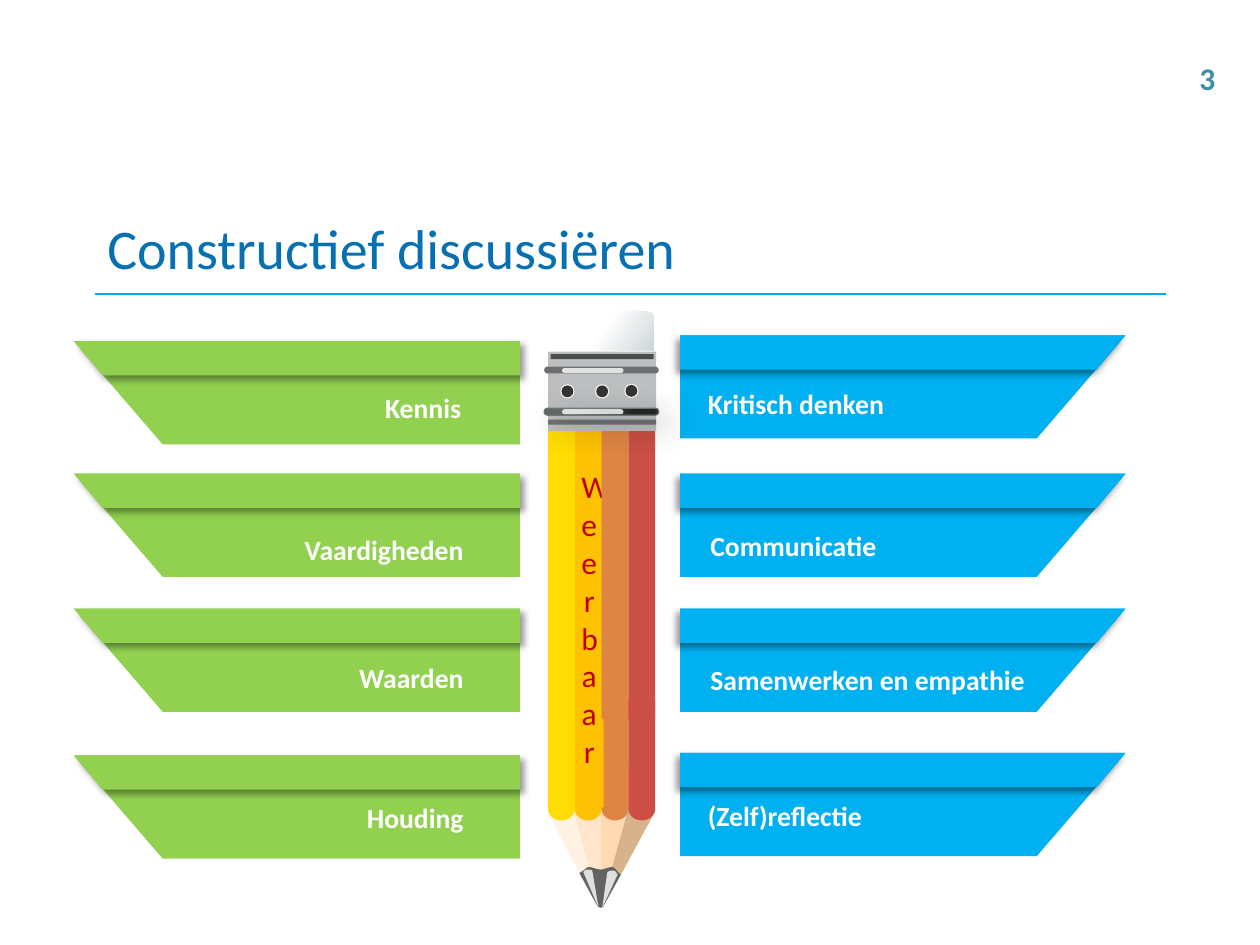
"""Build the slide on constructive discussion: eight banners around a pencil."""
import pptx
import pptx.dml.color
import pptx.enum.shapes
import pptx.enum.text
import pptx.oxml.ns
import pptx.util
from lxml import etree

Cm, Pt = pptx.util.Cm, pptx.util.Pt
RGB = pptx.dml.color.RGBColor
SHAPE = pptx.enum.shapes.MSO_SHAPE
ALIGN = pptx.enum.text.PP_ALIGN
ANCHOR = pptx.enum.text.MSO_ANCHOR
qn = pptx.oxml.ns.qn

WHITE, BLACK = RGB(255, 255, 255), RGB(0, 0, 0)
GREEN, BLUE = RGB(0x92, 0xD0, 0x50), RGB(0x00, 0xB0, 0xF0)
TITLE_BLUE, RULE_BLUE = RGB(0x07, 0x70, 0xB1), RGB(0x0B, 0xA7, 0xDF)
NUMBER_BLUE, DARK_RED = RGB(0x3E, 0x8E, 0xA9), RGB(0xC0, 0, 0)
YELLOW, AMBER = RGB(0xFF, 0xDD, 0x03), RGB(0xFF, 0xC2, 0x03)
ORANGE, RED = RGB(0xDF, 0x85, 0x44), RGB(0xCB, 0x4F, 0x44)
LEAD, METAL, CLIP = RGB(0x63, 0x63, 0x63), RGB(0xBC, 0xBE, 0xC0), RGB(0x6D, 0x6E, 0x71)
CLIP_EDGE, RING = RGB(0x70, 0x74, 0x73), RGB(0xE6, 0xE7, 0xE8)
WOOD_PALE, WOOD_LIGHT = RGB(0xFF, 0xF2, 0xE3), RGB(0xFF, 0xE6, 0xCA)
WOOD_MID, WOOD_DARK = RGB(0xFF, 0xDA, 0xB0), RGB(0xD6, 0xB3, 0x8B)
CLIP_STOPS = [(0, "606867"), (24, "606867"), (79, "222625"), (100, "222625")]
ERASER_STOPS = [(0, "FFFFFF"), (23, "FFFFFF"), (63, "E6EAEB"), (100, "CDD5D8")]

TITLE, PAGE, PENCIL_WORD = "Constructief discussiëren", "3", "Weerbaar"
SIDES = [
    dict(outer=1.49, inner=10.48, color=GREEN, angle=45, align=ALIGN.RIGHT, right_gap=0.71, items=[
        ("Kennis", 6.88, (3.86, 7.78, 6.15)), ("Vaardigheden", 9.55, (3.91, 10.64, 6.15)),
        ("Waarden", 12.27, (3.71, 13.23, 6.35)), ("Houding", 15.23, (3.71, 16.05, 6.35))]),
    dict(outer=22.69, inner=13.71, color=BLUE, angle=129, align=ALIGN.LEFT, right_gap=0, items=[
        ("Kritisch denken", 6.76, (14.17, 7.70, 5.08)), ("Communicatie", 9.55, (14.22, 10.57, 7.21)),
        ("Samenwerken en empathie", 12.27, (14.22, 13.27, 6.8)),
        ("(Zelf)reflectie", 15.18, (14.17, 16.0, 4.80))]),
]
BANNER_PARTS = [(2.08, 1.79), (0.69, 0.58)]

WOOD = [
    (WOOD_LIGHT, [(12.12, 17.53), (12.09, 15.37), (11.56, 15.37), (11.38, 15.7), (11.89, 17.55)]),
    (WOOD_MID, [(12.32, 17.55), (12.83, 15.72), (12.65, 15.37), (12.09, 15.37), (12.12, 17.53)]),
    (WOOD_DARK, [(12.52, 17.63), (13.18, 16.41), (12.83, 15.72), (12.32, 17.55)]),
    (WOOD_PALE, [(11.38, 15.7), (11.05, 16.38), (11.68, 17.6), (11.89, 17.55)]),
    (LEAD, [(11.68, 17.6), (12.04, 18.26), (12.07, 18.31, 12.17, 18.31, 12.17, 18.26), (12.52, 17.63),
            (12.45, 17.6, 12.42, 17.5, 12.34, 17.48), (12.27, 17.48, 12.17, 17.53, 12.12, 17.53),
            (12.04, 17.53, 11.94, 17.48, 11.86, 17.48), (11.81, 17.5, 11.73, 17.58, 11.68, 17.6)]),
]
GLINTS = [
    [(12.45, 17.63), (12.14, 18.31), (12.24, 17.6), (12.27, 17.55, 12.32, 17.55, 12.37, 17.55),
     (12.4, 17.55, 12.42, 17.58, 12.45, 17.63)],
    [(11.76, 17.58), (12.07, 18.31), (11.94, 17.55), (11.91, 17.53, 11.86, 17.53, 11.84, 17.53),
     (11.81, 17.53, 11.78, 17.55, 11.76, 17.58)],
]
ERASER = [(13.18, 7.06), (12.01, 7.06), (12.01, 6.38), (12.01, 6.32, 12.11, 6.27, 12.24, 6.27),
          (12.93, 6.27), (13.08, 6.27, 13.18, 6.32, 13.18, 6.38)]
STRIPES = [(YELLOW, 7.26, 0.54, 7.24), (AMBER, 8.66, 0.58, 7.62),
           (ORANGE, 7.26, 0.54, 7.24), (RED, 7.26, 0.54, 7.24)]
BAR_LEFT, BAR_WIDTH = 11.05, 0.54
RIVETS = [(11.44, 7.89), (12.14, 7.89), (12.73, 7.88)]


def set_text(shape, text, align=ALIGN.LEFT, anchor=ANCHOR.TOP, margins=None, color=WHITE, **font_format):
    frame = shape.text_frame
    frame.text = text
    for name, value in dict(margins or {}, word_wrap=True, vertical_anchor=anchor).items():
        setattr(frame, name, value)
    paragraph = frame.paragraphs[0]
    paragraph.alignment = align
    for name, value in dict(name="Calibri", **font_format).items():
        setattr(paragraph.font, name, value)
    paragraph.font.color.rgb = color


def paint(shape, color, alpha=100):
    shape.shadow.inherit = False
    shape.line.fill.background()
    shape.fill.solid()
    shape.fill.fore_color.rgb = color
    if alpha < 100:
        node = shape._element.spPr.find(".//" + qn("a:srgbClr"))
        etree.SubElement(node, qn("a:alpha"), val=str(alpha * 1000))
    return shape


def paint_gradient(shape, stops, angle):
    shape.fill.gradient()
    shape.fill.gradient_angle = -angle % 360
    stop_list = shape._element.spPr.find(".//" + qn("a:gsLst"))
    for old in list(stop_list):
        stop_list.remove(old)
    for position, value in stops:
        stop = etree.SubElement(stop_list, qn("a:gs"), pos=str(position * 1000))
        etree.SubElement(stop, qn("a:srgbClr"), val=value)


def cast_shadow(shape, blur, distance, angle):
    effects = shape._element.spPr.find(qn("a:effectLst"))
    shadow = etree.SubElement(effects, qn("a:outerShdw"), blurRad=str(Pt(blur)), dist=str(Pt(distance)),
                              dir=str(angle * 60000), algn="tl", rotWithShape="0")
    node = etree.SubElement(shadow, qn("a:srgbClr"), val="000000")
    etree.SubElement(node, qn("a:alpha"), val="40000")


def add_outline(shapes, outline, color, alpha=100, steps=8):
    """Draw (x, y) corners and (x1, y1, x2, y2, x, y) curves as one closed shape."""
    points = [outline[0]]
    for part in outline[1:]:
        if len(part) == 2:
            points.append(part)
            continue
        anchors = [points[-1], part[:2], part[2:4], part[4:]]
        for t in (step / steps for step in range(1, steps + 1)):
            weights = ((1 - t) ** 3, 3 * t * (1 - t) ** 2, 3 * t * t * (1 - t), t ** 3)
            points.append(tuple(sum(w * a[axis] for w, a in zip(weights, anchors)) for axis in (0, 1)))
    corners = [(Cm(x), Cm(y)) for x, y in points]
    builder = shapes.build_freeform(*corners[0], scale=1.0)
    builder.add_line_segments(corners[1:], close=True)
    return paint(builder.convert_to_shape(), color, alpha)


def add_preset(shapes, kind, box, color, alpha=100):
    shape = paint(shapes.add_shape(kind, *map(Cm, box)), color, alpha)
    if kind == SHAPE.ROUNDED_RECTANGLE:
        shape.adjustments[0] = 0.5
    return shape


def add_banners(slide, side):
    inner, outer = side["inner"], side["outer"]
    inward = 1 if inner > outer else -1
    margins = dict(margin_left=Cm(0.1), margin_top=Cm(0.1), margin_bottom=Cm(0.1),
                   margin_right=Cm(side["right_gap"]))
    for label, top, (left, label_top, width) in side["items"]:
        for height, slant in BANNER_PARTS:
            part = add_outline(slide.shapes, [(inner, top), (outer, top), (outer + inward * slant, top + height),
                                              (inner, top + height)], side["color"])
        cast_shadow(part, 4, 3, side["angle"])
        caption = slide.shapes.add_textbox(Cm(left), Cm(label_top), Cm(width), Cm(0.86))
        set_text(caption, label, side["align"], margins=margins, size=Pt(15.8), bold=True)


def add_pencil(shapes):
    for color, outline in WOOD:
        add_outline(shapes, outline, color)
    lefts = [BAR_LEFT + i * BAR_WIDTH for i in range(len(STRIPES))]
    for x, (color, *_) in zip(lefts, STRIPES):
        mid, right = x + BAR_WIDTH / 2, x + BAR_WIDTH
        add_outline(shapes, [(x, 14.12), (x, 16.31), (x, 16.45, mid - 0.13, 16.54, mid, 16.54),
                             (mid + 0.13, 16.54, right, 16.45, right, 16.31), (right, 14.12)], color)
    margins = {f"margin_{edge}": Cm(0.13) for edge in ("left", "top", "right", "bottom")}
    for x, (color, top, width, height) in zip(lefts, STRIPES):
        stripe = add_preset(shapes, SHAPE.RECTANGLE, (x, top, width, height), color)
        if color == AMBER:
            set_text(stripe, PENCIL_WORD, ALIGN.CENTER, ANCHOR.MIDDLE, margins, DARK_RED, size=Pt(18))
    for outline in GLINTS:
        add_outline(shapes, outline, WHITE, 80)

    add_preset(shapes, SHAPE.RECTANGLE, (11.05, 7.09, 2.18, 1.6), METAL)
    add_preset(shapes, SHAPE.RECTANGLE, (11.1, 7.14, 2.08, 0.1), BLACK, 60)
    add_preset(shapes, SHAPE.RECTANGLE, (11.05, 8.46, 2.18, 0.1), BLACK, 40)
    clips = [add_preset(shapes, SHAPE.ROUNDED_RECTANGLE, (10.97, top, 2.31, 0.14), CLIP) for top in (7.39, 8.23)]
    paint_gradient(clips[1], CLIP_STOPS, 0)
    clips[1].line.color.rgb = CLIP_EDGE
    clips[1].line.width = Pt(0.75)
    cast_shadow(clips[1], 19, 8, 45)
    for top in (7.42, 8.25):
        add_preset(shapes, SHAPE.ROUNDED_RECTANGLE, (11.33, top, 1.24, 0.1), WHITE, 80)
    for x, y in RIVETS:
        for size, color, alpha in ((0.29, RING, 100), (0.27, WHITE, 100), (0.24, BLACK, 80)):
            add_preset(shapes, SHAPE.OVAL, (x - size / 2, y - size / 2, size, size), color, alpha)
    paint_gradient(add_outline(shapes, ERASER, WHITE), ERASER_STOPS, 35)


def main():
    deck = pptx.Presentation()
    deck.slide_width, deck.slide_height = Cm(25.4), Cm(19.05)
    slide = deck.slides.add_slide(deck.slide_layouts[5])
    rule = slide.shapes.add_connector(pptx.enum.shapes.MSO_CONNECTOR.STRAIGHT,
                                      Cm(1.91), Cm(5.92), Cm(23.5), Cm(5.92))
    rule._element.remove(rule._element.find(qn("p:style")))
    rule.line.color.rgb = RULE_BLUE
    rule.line.width = Pt(1)
    etree.SubElement(rule._element.spPr, qn("a:effectLst"))
    for side in SIDES:
        add_banners(slide, side)
    add_pencil(slide.shapes.add_group_shape().shapes)
    title = slide.shapes.title
    for name, value in dict(left=Cm(1.91), top=Cm(4.03), width=Cm(21.59), height=Cm(1.91)).items():
        setattr(title, name, value)
    set_text(title, TITLE, anchor=ANCHOR.MIDDLE, color=TITLE_BLUE, size=Pt(32))
    number = slide.shapes.add_textbox(Cm(23.93), Cm(1.07), Cm(0.84), Cm(1.02))
    set_text(number, PAGE, color=NUMBER_BLUE, size=Pt(18), bold=True)
    deck.save("out.pptx")


if __name__ == "__main__":
    main()
